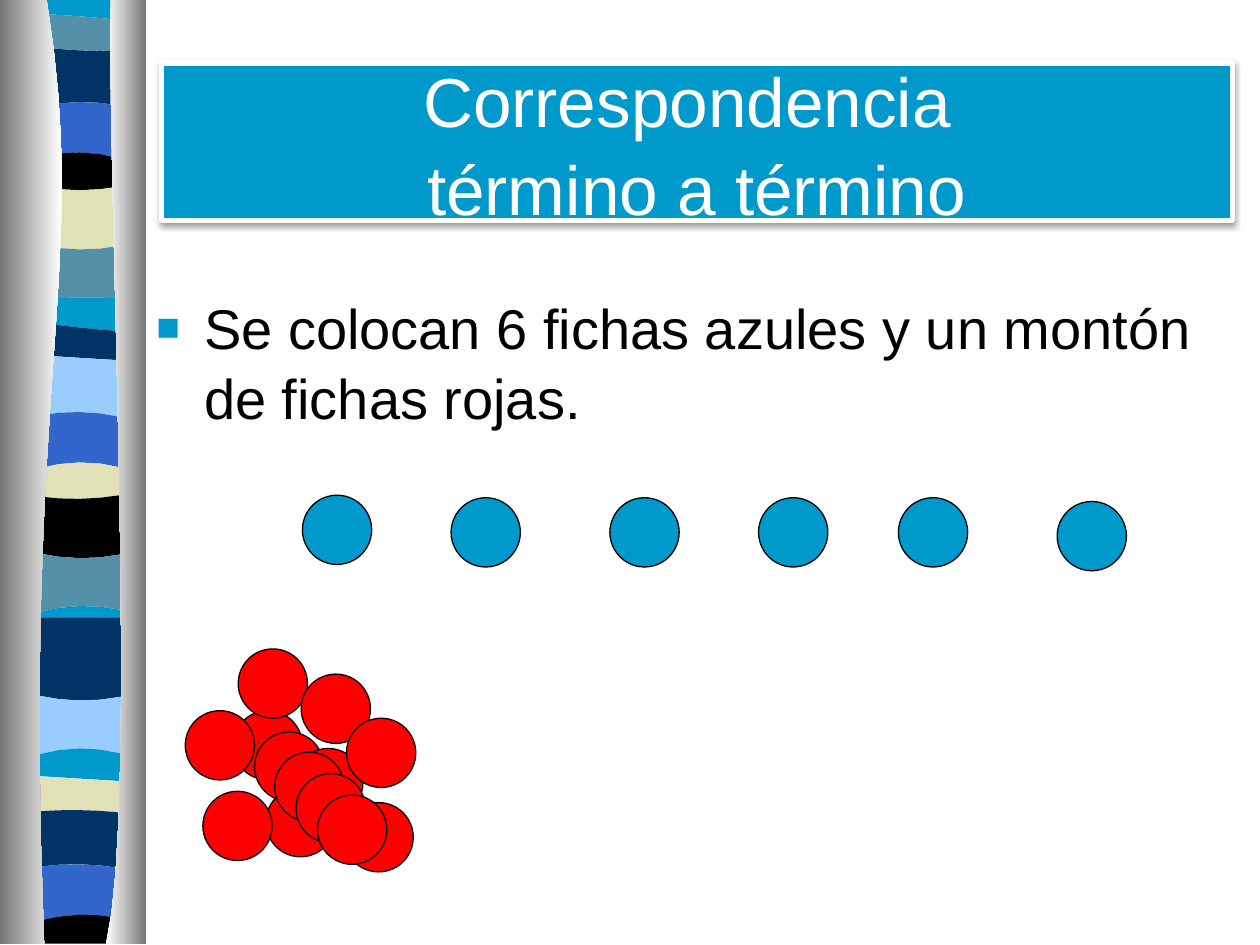
from lxml import etree
from pptx import Presentation
from pptx.dml.color import RGBColor
from pptx.enum.shapes import MSO_SHAPE
from pptx.enum.text import MSO_ANCHOR, MSO_AUTO_SIZE, PP_ALIGN
from pptx.oxml import parse_xml
from pptx.oxml.ns import qn
from pptx.util import Inches, Pt

OVAL = MSO_SHAPE.OVAL
MIDDLE, TOP = MSO_ANCHOR.MIDDLE, MSO_ANCHOR.TOP
CENTER, LEFT = PP_ALIGN.CENTER, PP_ALIGN.LEFT
NO_FIT = MSO_AUTO_SIZE.NONE
NS = 'xmlns:a="http://schemas.openxmlformats.org/drawingml/2006/main"'
WAVE_STEPS, CURVE_STEPS = 4, 16
BLUE, RED, BLACK, WHITE = "0099CC", "FF0000", "000000", "FFFFFF"
TEAL, NAVY, ROYAL, SAND, SKY, GREY = "5490A8", "003366", "3366CC", "E1E1B7", "99CCFF", "767676"
BAND_LEFT, BAND_WIDTH = 0.3, 0.66
BANDS = [
    (BLUE, 0, 0, 0), (TEAL, 0.11, 0.13, 0.16), (NAVY, 0.37, 0.4, 0.4),
    (ROYAL, 0.85, 0.81, 0.84), (BLACK, 1.25, 1.21, 1.26), (SAND, 1.48, 1.51, 1.48),
    (TEAL, 1.94, 1.98, 1.95), (BLUE, 2.38, 2.36, 2.37), (NAVY, 2.56, 2.6, 2.63),
    (SKY, 2.82, 2.84, 2.86), (ROYAL, 3.3, 3.27, 3.31), (SAND, 3.72, 3.67, 3.71),
    (BLACK, 3.94, 3.96, 3.93), (TEAL, 4.39, 4.43, 4.4), (BLUE, 4.86, 4.81, 4.84),
    (NAVY, 4.9, 4.9, 4.9), (SKY, 5.52, 5.56, 5.53), (BLUE, 5.99, 5.94, 5.98),
    (SAND, 6.16, 6.18, 6.2), (NAVY, 6.44, 6.43, 6.45), (ROYAL, 6.88, 6.86, 6.89),
    (BLACK, 7.31, 7.26, 7.29),
]
BLUE_CHIPS = [(2.4, 3.93), (3.58, 3.95), (4.84, 3.95), (6.02, 3.95), (7.13, 3.95), (8.39, 3.98)]
RED_CHIPS = [
    (1.85, 5.64), (2.02, 5.81), (2.33, 5.94), (2.11, 6.25), (2.73, 6.37), (1.89, 5.15),
    (1.47, 5.64), (1.61, 6.28), (2.39, 5.35), (2.75, 5.7), (2.18, 5.97), (2.35, 6.14),
    (2.52, 6.31),
]


def rgb(value):
    """Turn a hex string into a colour."""
    return RGBColor.from_string(value)


def add_outline(s, points):
    """Add a closed, lineless freeform through points given in inches."""
    pts = [(Inches(x), Inches(y)) for x, y in points]
    builder = s.shapes.build_freeform(*pts[0])
    builder.add_line_segments(pts[1:], close=True)
    sp = builder.convert_to_shape()
    sp.shadow.inherit = False
    sp.line.fill.background()
    return sp


def cubic(p0, p1, p2, p3):
    """Sample a Bezier curve."""
    points = []
    for i in range(CURVE_STEPS + 1):
        t = i / CURVE_STEPS
        weights = ((1 - t) ** 3, 3 * t * (1 - t) ** 2, 3 * t * t * (1 - t), t ** 3)
        points.append(tuple(sum(w * p[k] for w, p in zip(weights, (p0, p1, p2, p3)))
                            for k in (0, 1)))
    return points


def wave(left, mid, right):
    """Sample a parabola through the heights of a band edge."""
    points = []
    for i in range(WAVE_STEPS + 1):
        t = i / WAVE_STEPS
        y = left * (1 - t) * (1 - 2 * t) + mid * 4 * t * (1 - t) + right * t * (2 * t - 1)
        points.append((BAND_LEFT + BAND_WIDTH * t, y))
    return points


def add_ribbon(s, height):
    """Draw the wavy bands and the two shaded columns beside them."""
    edges = [wave(*heights) for _, *heights in BANDS] + [wave(height, height, height)]
    for (color, *_), top, bottom in zip(BANDS, edges, edges[1:]):
        sp = add_outline(s, top + bottom[::-1])
        sp.fill.solid()
        sp.fill.fore_color.rgb = rgb(color)
    left = cubic((0.37, 0), (0.72, 2.16), (0.17, 2.96), (0.35, height))
    right = cubic((0.88, 0), (0.84, 1.25), (1.11, 6.46), (0.84, height))
    columns = [(left, 0, GREY, WHITE), (right, 1.16, WHITE, GREY)]
    for curve, side, start, end in columns:
        sp = add_outline(s, curve + [(side, height), (side, 0)])
        sp.fill.gradient()
        sp.fill.gradient_angle = 0
        for stop, color in zip(sp.fill.gradient_stops, (start, end)):
            stop.color.rgb = rgb(color)


def set_text(sp, box, text, size, color, align, anchor):
    """Place a placeholder and give it one formatted paragraph."""
    sp.left, sp.top, sp.width, sp.height = (Inches(v) for v in box)
    tf = sp.text_frame
    tf.text = text
    tf.word_wrap = True
    tf.auto_size = NO_FIT
    tf.vertical_anchor = anchor
    p = tf.paragraphs[0]
    p.alignment = align
    p.line_spacing = 1.05
    for r in p.runs:
        r.font.name = "Arial"
        r.font.size = Pt(size)
        r.font.color.rgb = rgb(color)
    return p


def add_title(s, box):
    """Format the title as a blue panel with a white frame and a shadow."""
    sp = s.shapes.title
    set_text(sp, box, "Correspondencia \vtérmino a término", 39.6, WHITE, CENTER, MIDDLE)
    sp.fill.solid()
    sp.fill.fore_color.rgb = rgb(BLUE)
    sp.line.color.rgb = rgb(WHITE)
    sp.line.width = Pt(3)
    sp._element.spPr.append(parse_xml(
        f'<a:effectLst {NS}><a:outerShdw blurRad="40000" dist="20000" dir="5400000" '
        'rotWithShape="0"><a:srgbClr val="000000"><a:alpha val="38000"/></a:srgbClr>'
        '</a:outerShdw></a:effectLst>'))


def add_body(s, box):
    """Write the bulleted statement."""
    p = set_text(s.placeholders[1], box, "Se colocan 6 fichas azules y un montón de fichas rojas.",
                 32, BLACK, LEFT, TOP)
    pPr = p._p.get_or_add_pPr()
    pPr.set("marL", str(Inches(0.38)))
    pPr.set("indent", str(-Inches(0.38)))
    color = etree.SubElement(pPr, qn("a:buClr"))
    etree.SubElement(color, qn("a:srgbClr"), val=BLUE)
    etree.SubElement(pPr, qn("a:buSzPct"), val="70000")
    etree.SubElement(pPr, qn("a:buFont"), typeface="Arial")
    etree.SubElement(pPr, qn("a:buChar"), char="■")


def add_chips(s, places, color, size=0.55):
    """Draw equal round chips at the given places."""
    for x, y in places:
        sp = s.shapes.add_shape(OVAL, Inches(x), Inches(y), Inches(size), Inches(size))
        sp.shadow.inherit = False
        sp.fill.solid()
        sp.fill.fore_color.rgb = rgb(color)
        sp.line.color.rgb = rgb(BLACK)
        sp.line.width = Pt(0.75)


def main():
    """Build and save the slide."""
    prs = Presentation()
    prs.slide_width, prs.slide_height = Inches(10), Inches(7.5)
    s = prs.slides.add_slide(prs.slide_layouts[1])
    add_ribbon(s, 7.49)
    add_title(s, (1.28, 0.5, 8.5, 1.25))
    add_body(s, (1.14, 2.25, 8.5, 4.5))
    add_chips(s, BLUE_CHIPS, BLUE)
    add_chips(s, RED_CHIPS, RED)
    prs.save("out.pptx")


if __name__ == "__main__":
    main()
